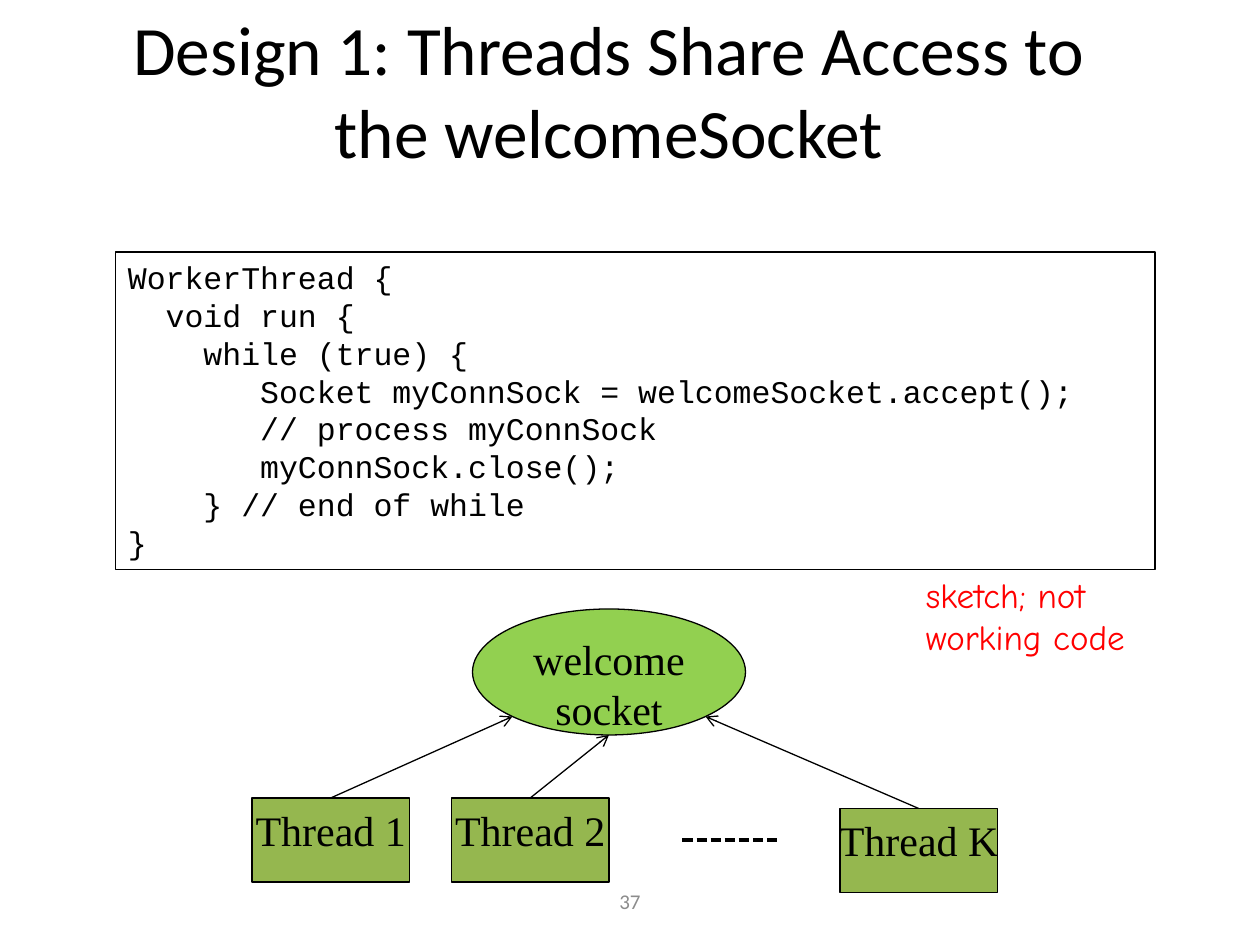
from math import cos, pi, sin

from pptx import Presentation
from pptx.dml.color import RGBColor
from pptx.enum.dml import MSO_LINE
from pptx.enum.shapes import MSO_CONNECTOR, MSO_SHAPE
from pptx.enum.text import MSO_ANCHOR, PP_ALIGN
from pptx.oxml.ns import qn
from pptx.util import Pt
from lxml.etree import SubElement

BLACK, RED, GREY = "000000", "FF0000", "8C8C8C"
LIME, OLIVE = "92D050", "95B74F"
SANS, SERIF, MONO, HAND = "Calibri", "Times New Roman", "Courier New", "Comic Neue"


def color(hex_text):
    return RGBColor.from_string(hex_text)


class Sketch:
    """Holds the line style and the current slide."""

    def __init__(self, slide, line_width=0.75):
        self.slide = slide
        self.line_width = line_width

    def set_text(self, shape, text, font, size, ink=BLACK, align=PP_ALIGN.CENTER,
                 anchor=MSO_ANCHOR.TOP, wrap=True):
        frame = shape.text_frame
        frame.text = text
        frame.word_wrap = wrap
        frame.vertical_anchor = anchor
        for paragraph in frame.paragraphs:
            paragraph.alignment = align
            for run in paragraph.runs:
                run.font.name = font
                run.font.size = Pt(size)
                run.font.color.rgb = color(ink)
        return frame

    def label(self, box, *args, **style):
        return self.set_text(self.slide.shapes.add_textbox(*map(Pt, box)), *args, **style)

    def node(self, kind, box, fill=None):
        shape = self.slide.shapes.add_shape(kind, *map(Pt, box))
        shape.shadow.inherit = False
        if fill:
            shape.fill.solid()
            shape.fill.fore_color.rgb = color(fill)
        else:
            shape.fill.background()
        shape.line.color.rgb = color(BLACK)
        shape.line.width = Pt(self.line_width)
        return shape

    def code(self, box, lines, size, spacing):
        """Each line is a pair: indent in characters, statement."""
        listing = self.node(MSO_SHAPE.RECTANGLE, box)
        frame = self.set_text(listing, "\n".join(text for _, text in lines),
                              MONO, size, align=PP_ALIGN.LEFT)
        for paragraph, (indent, _) in zip(frame.paragraphs, lines):
            paragraph.line_spacing = Pt(spacing)
            margin = Pt(indent * size * 0.6)  # a monospaced character is 0.6 em wide
            paragraph._p.get_or_add_pPr().set("marL", str(margin))

    def line(self, start, end, width=None):
        link = self.slide.shapes.add_connector(MSO_CONNECTOR.STRAIGHT, *map(Pt, start + end))
        link.line.color.rgb = color(BLACK)
        link.line.width = Pt(width or self.line_width)
        SubElement(link._element.spPr, qn("a:effectLst"))
        return link

    def arrow(self, start, end, source):
        link = self.line(start, end)
        link.begin_connect(source, 0)
        SubElement(link.line._get_or_add_ln(), qn("a:tailEnd"), type="arrow")


def main():
    deck = Presentation()
    deck.slide_width, deck.slide_height = Pt(720), Pt(540)
    sketch = Sketch(deck.slides.add_slide(deck.slide_layouts[6]))

    # Title and page number
    sketch.label((42, 6, 612, 90), "Design 1: Threads Share Access to the welcomeSocket",
                 SANS, 39.6, anchor=MSO_ANCHOR.MIDDLE)
    sketch.label((246, 500.5, 228, 28.75), "37", SANS, 12, GREY, anchor=MSO_ANCHOR.MIDDLE)

    # Code of the worker thread
    sketch.code((66, 144, 594, 181.5), [
        (0, "WorkerThread {"),
        (2, "void run {"),
        (4, "while (true) {"),
        (7, "Socket myConnSock = welcomeSocket.accept();"),
        (7, "// process myConnSock"),
        (7, "myConnSock.close();"),
        (4, "} // end of while"),
        (0, "}"),
    ], size=18, spacing=21.6)
    sketch.label((522, 324, 137, 55.5), "sketch; not\nworking code", HAND, 20, RED,
                 align=PP_ALIGN.LEFT, wrap=False)

    # Shared welcome socket
    left, top, width, height = 270, 348, 156, 72
    socket = sketch.node(MSO_SHAPE.OVAL, (left, top, width, height), LIME)
    sketch.set_text(socket, "welcome\nsocket", SERIF, 24, wrap=False)

    # Threads, each pointing at a spot on the socket's lower rim
    thread_width, thread_height = 90, 48
    threads = [("Thread 1", 144, 456, 3 * pi / 4),
               ("Thread 2", 258, 456, pi / 2),
               ("Thread K", 480, 462, pi / 4)]
    for name, x, y, angle in threads:
        thread = sketch.node(MSO_SHAPE.RECTANGLE, (x, y, thread_width, thread_height), OLIVE)
        sketch.set_text(thread, name, SERIF, 24, wrap=False)
        rim = (left + width / 2 * (1 + cos(angle)), top + height / 2 * (1 + sin(angle)))
        sketch.arrow((x + thread_width / 2, y), rim, thread)

    # Dashes for the threads in between
    between = sketch.line((390, 480), (444, 480), width=2)
    between.line.dash_style = MSO_LINE.SQUARE_DOT

    deck.save("out.pptx")


if __name__ == "__main__":
    main()
